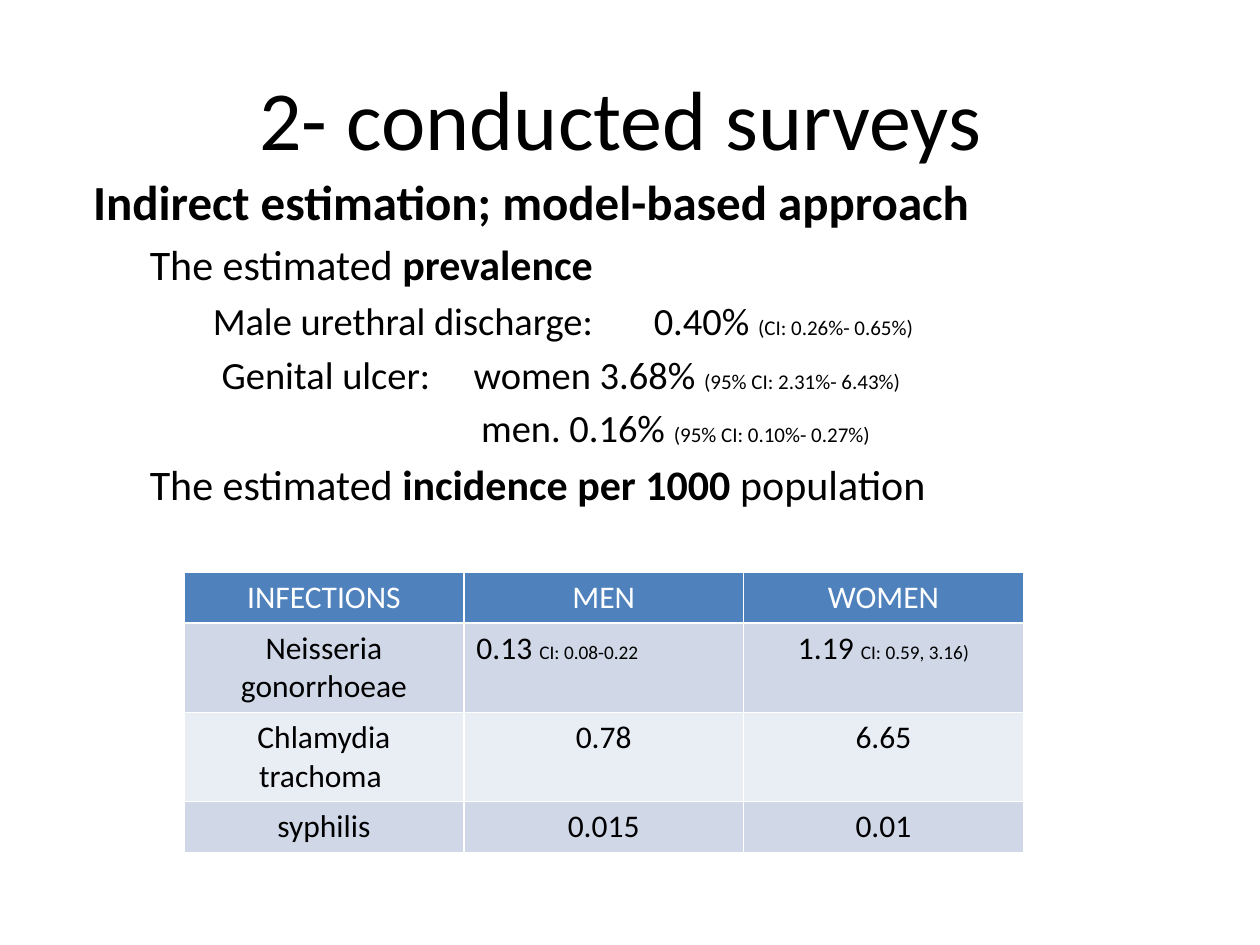
from lxml.etree import SubElement
from pptx import Presentation
from pptx.dml.color import RGBColor
from pptx.enum.text import MSO_ANCHOR, PP_ALIGN
from pptx.oxml.ns import qn
from pptx.util import Cm, Pt

COLORS = {"text": "000000", "header_text": "FFFFFF", "header": "4F81BD",
          "odd_row": "D0D8E8", "even_row": "E9EDF4"}
FONT = "Calibri"

TITLE = "2- conducted surveys "
# Each line: indent (cm), tab stop (cm) or None, size (pt), runs of (text, bold, size)
OUTLINE = [
    (0.13, None, 28, [("Indirect estimation; model-based approach", True, 28)]),
    (1.27, None, 24, [("The estimated ", False, 24), ("prevalence", True, 24)]),
    (2.54, 11.4, 22, [("Male urethral discharge:\t0.40% ", False, 22),
                      ("(CI: 0.26%- 0.65%)", False, 12)]),
    (2.72, 8.47, 22, [("Genital ulcer:\twomen 3.68% ", False, 22),
                      ("(95% CI: 2.31%- 6.43%)", False, 12)]),
    (7.95, None, 22, [("men. 0.16% ", False, 22),
                      ("(95% CI: 0.10%- 0.27%)", False, 12)]),
    (1.27, None, 24, [("The estimated ", False, 24),
                      ("incidence per 1000 ", True, 24),
                      ("population", False, 24)]),
]
# Each cell: value, confidence interval
INFECTIONS = [
    [("INFECTIONS", ""), ("MEN", ""), ("WOMEN", "")],
    [("Neisseria gonorrhoeae", ""), ("0.13 ", "CI: 0.08-0.22"),
     ("1.19 ", "CI: 0.59, 3.16)")],
    [("Chlamydia trachoma ", ""), ("0.78", ""), ("6.65", "")],
    [("syphilis", ""), ("0.015", ""), ("0.01", "")],
]
ROW_HEIGHTS = [1.03, 1.8, 1.8, 1.03]
COLUMN_WIDTH = 5.64
LEFT_ALIGNED = (1, 1)


def add_run(paragraph, text, size, bold=False, color="text"):
    run = paragraph.add_run()
    run.text = text
    run.font.name = FONT
    run.font.size = Pt(size)
    run.font.bold = bold
    run.font.color.rgb = RGBColor.from_string(COLORS[color])


def set_indent(paragraph, indent, tab):
    properties = paragraph._p.get_or_add_pPr()
    properties.set("marL", str(Cm(indent)))
    properties.set("indent", "0")
    if tab:
        tabs = SubElement(properties, qn("a:tabLst"))
        SubElement(tabs, qn("a:tab"), pos=str(Cm(tab)), algn="l")


presentation = Presentation()
presentation.slide_width, presentation.slide_height = Cm(25.4), Cm(19.05)
slide = presentation.slides.add_slide(presentation.slide_layouts[6])

# Title
title = slide.shapes.add_textbox(Cm(1.27), Cm(0.76), Cm(22.86), Cm(3.18)).text_frame
title.word_wrap = True
title.vertical_anchor = MSO_ANCHOR.MIDDLE
title.paragraphs[0].alignment = PP_ALIGN.CENTER
add_run(title.paragraphs[0], TITLE, 48)

# Outline of estimates
outline = slide.shapes.add_textbox(Cm(1.5), Cm(3.33), Cm(22.6), Cm(13.59)).text_frame
outline.word_wrap = True
for index, (indent, tab, size, runs) in enumerate(OUTLINE):
    line = outline.add_paragraph() if index else outline.paragraphs[0]
    line.space_before = Pt(size * 0.2)
    set_indent(line, indent, tab)
    for text, bold, run_size in runs:
        add_run(line, text, run_size, bold)

# Incidence table
table = slide.shapes.add_table(
    len(INFECTIONS), len(INFECTIONS[0]), Cm(3.71), Cm(11.53),
    Cm(COLUMN_WIDTH * len(INFECTIONS[0])), Cm(sum(ROW_HEIGHTS))).table
for column in table.columns:
    column.width = Cm(COLUMN_WIDTH)
for row, (height, values) in enumerate(zip(ROW_HEIGHTS, INFECTIONS)):
    table.rows[row].height = Cm(height)
    band = "header" if row == 0 else "odd_row" if row % 2 else "even_row"
    text_color = "text" if row else "header_text"
    for column, (value, interval) in enumerate(values):
        cell = table.cell(row, column)
        cell.fill.solid()
        cell.fill.fore_color.rgb = RGBColor.from_string(COLORS[band])
        paragraph = cell.text_frame.paragraphs[0]
        paragraph.alignment = (PP_ALIGN.LEFT if (row, column) == LEFT_ALIGNED
                               else PP_ALIGN.CENTER)
        add_run(paragraph, value, 18, color=text_color)
        if interval:
            add_run(paragraph, interval, 11, color=text_color)

presentation.save("out.pptx")
